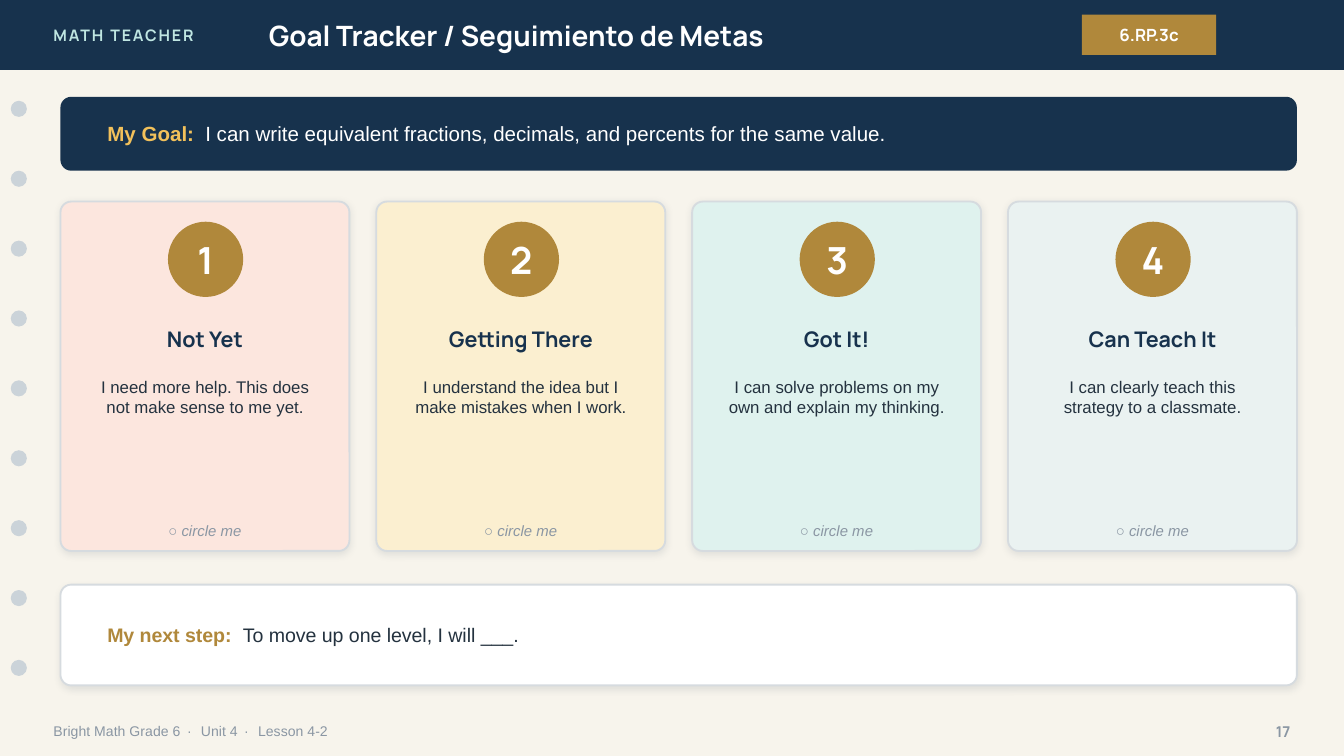
from dataclasses import dataclass
from lxml.etree import SubElement
from pptx import Presentation
from pptx.dml.color import RGBColor
from pptx.enum.shapes import MSO_SHAPE as Geo
from pptx.enum.text import MSO_ANCHOR as Anchor, MSO_AUTO_SIZE as AutoSize, PP_ALIGN as Align
from pptx.oxml.ns import qn
from pptx.util import Emu, Pt

SCALE = 9144
W, H = 1000, 562


@dataclass(frozen=True)
class Theme:
    navy: str = "17324D"
    gold: str = "B0883B"
    sun: str = "F2C15B"
    mint: str = "BFE6E2"
    white: str = "FFFFFF"
    cream: str = "F7F4EC"
    ink: str = "24323F"
    muted: str = "8A96A3"
    hole: str = "CBD3D9"
    border: str = "D6DBDF"
    shade: str = "1C2E42"
    levels: tuple = ("FCE6DE", "FBEFD0", "DFF2EE", "EAF2F1")
    head: str = "Manrope"
    body: str = "Arial"
    title: float = 15
    brand: float = 8.5
    code: float = 9
    goal: float = 11
    step: float = 10.5
    number: float = 20
    level: float = 11.5
    detail: float = 9
    hint: float = 8
    footer: float = 7.5
    page: float = 8


T = Theme()
LEVELS = [
    ("Not Yet", "I need more help. This does not make sense to me yet."),
    ("Getting There", "I understand the idea but I make mistakes when I work."),
    ("Got It!", "I can solve problems on my own and explain my thinking."),
    ("Can Teach It", "I can clearly teach this strategy to a classmate."),
]


def px(n):
    return Emu(n * SCALE)


def rgb(value):
    return RGBColor.from_string(value)


def style(name, size, color, bold=False, italic=False, spc=0):
    font = {"name": name, "size": Pt(size), "bold": bold, "italic": italic}
    return font, color, spc


def write(sp, runs, align=Align.LEFT, anchor=Anchor.MIDDLE, tab=None):
    tf = sp.text_frame
    frame = {"word_wrap": True, "auto_size": AutoSize.NONE, "vertical_anchor": anchor}
    for key, value in frame.items():
        setattr(tf, key, value)
    p = tf.paragraphs[0]
    p.alignment = align
    if tab:
        tabs = SubElement(p._p.get_or_add_pPr(), qn("a:tabLst"))
        SubElement(tabs, qn("a:tab"), pos=str(px(tab)), algn="l")
    for text, (font, color, spc) in runs:
        r = p.add_run()
        r.text = text
        for key, value in font.items():
            setattr(r.font, key, value)
        r.font.color.rgb = rgb(color)
        if spc:
            r._r.get_or_add_rPr().set("spc", str(spc))


def label(s, box, runs, **layout):
    sp = s.shapes.add_textbox(*map(px, box))
    write(sp, runs, **layout)


def shape(s, geo, box, fill, radius=None, raised=False):
    sp = s.shapes.add_shape(geo, *map(px, box))
    sp.fill.solid()
    sp.fill.fore_color.rgb = rgb(fill)
    sp.line.fill.background()
    if radius:
        sp.adjustments[0] = radius / min(box[2:])
    if raised:
        sp.line.color.rgb = rgb(T.border)
        sp.line.width = Pt(1)
    sp.shadow.inherit = False
    if raised:
        effects = sp._element.spPr.find(qn("a:effectLst"))
        outer = SubElement(effects, qn("a:outerShdw"), blurRad=str(Pt(4)), dist=str(Pt(1)),
                           dir="5400000", algn="ctr", rotWithShape="0")
        color = SubElement(outer, qn("a:srgbClr"), val=T.shade)
        SubElement(color, qn("a:alpha"), val="10000")
    return sp


def header(s, x, y, w, h):
    shape(s, Geo.RECTANGLE, (x, y, w, h), T.navy)
    label(s, (x + 30, y, 240, h),
          [("MATH TEACHER", style(T.head, T.brand, T.mint, bold=True, spc=100))])
    title = s.shapes.title
    box = dict(left=x + 190, top=y, width=560, height=h)
    for key, value in box.items():
        setattr(title, key, px(value))
    write(title, [("Goal Tracker / Seguimiento de Metas",
                   style(T.head, T.title, T.white, bold=True))])
    s.shapes._spTree.append(title._element)
    tag = shape(s, Geo.RECTANGLE, (x + 805, y + 11, 100, 30), T.gold)
    write(tag, [("6.RP.3c", style(T.head, T.code, T.white, bold=True))], Align.CENTER)


def binder_holes(s, x, y, size, step, count):
    for i in range(count):
        shape(s, Geo.OVAL, (x, y + i * step, size, size), T.hole)


def footer(s, x, y, w, h):
    plain = style(T.body, T.footer, T.muted)
    dot = (" · ", style(T.body, T.footer, T.muted, spc=140))
    label(s, (x, y, 700, h), [("Bright Math Grade 6", plain), dot, ("Unit 4", plain),
                              dot, ("Lesson 4-2", plain)])
    label(s, (x + w - 50, y, 50, h),
          [("17", style(T.head, T.page, T.muted, bold=True))], align=Align.RIGHT)


def banner(s, x, y, w, h, lead, text, size, fill, lead_color, color, tab, raised=False):
    shape(s, Geo.ROUNDED_RECTANGLE, (x, y, w, h), fill, 8, raised)
    label(s, (x + 25, y, w - 50, h),
          [(lead + "\t", style(T.body, size, lead_color, bold=True)),
           (text, style(T.body, size, color))], tab=tab)


def level_card(s, x, y, w, h, number, name, detail, fill):
    shape(s, Geo.ROUNDED_RECTANGLE, (x, y, w, h), fill, 8, raised=True)
    badge = shape(s, Geo.OVAL, (x + 80, y + 15, 56, 56), T.gold)
    for side in ("left", "right", "top", "bottom"):
        setattr(badge.text_frame, f"margin_{side}", 0)
    write(badge, [(str(number), style(T.head, T.number, T.white, bold=True))], Align.CENTER)
    label(s, (x + 5, y + 85, w - 10, 35),
          [(name, style(T.head, T.level, T.navy, bold=True))], align=Align.CENTER)
    label(s, (x + 12, y + 125, w - 24, 115), [(detail, style(T.body, T.detail, T.ink))],
          align=Align.CENTER, anchor=Anchor.TOP)
    label(s, (x + 5, y + h - 25, w - 10, 20),
          [("○ circle me", style(T.body, T.hint, T.muted, italic=True))], align=Align.CENTER)


def level_row(s, x, y, w, h, gap):
    card_w = (w - gap * (len(LEVELS) - 1)) // len(LEVELS)
    for i, ((name, detail), fill) in enumerate(zip(LEVELS, T.levels)):
        level_card(s, x + i * (card_w + gap), y, card_w, h, i + 1, name, detail, fill)


def main():
    prs = Presentation()
    prs.slide_width = px(W)
    prs.slide_height = prs.slide_width * 9 // 16
    s = prs.slides.add_slide(prs.slide_layouts[5])
    s.background.fill.solid()
    s.background.fill.fore_color.rgb = rgb(T.cream)
    header(s, 0, 0, W, 52)
    binder_holes(s, 8, 75, 12, 52, 9)
    footer(s, 30, 530, 940, 28)
    banner(s, 45, 72, 920, 55, "My Goal:",
           "I can write equivalent fractions, decimals, and percents for the same value.",
           T.goal, T.navy, T.sun, T.white, 73)
    level_row(s, 45, 150, 920, 260, 20)
    banner(s, 45, 435, 920, 75, "My next step:", "To move up one level, I will ___.",
           T.step, T.white, T.gold, T.ink, 101, raised=True)
    prs.save("out.pptx")


if __name__ == "__main__":
    main()
